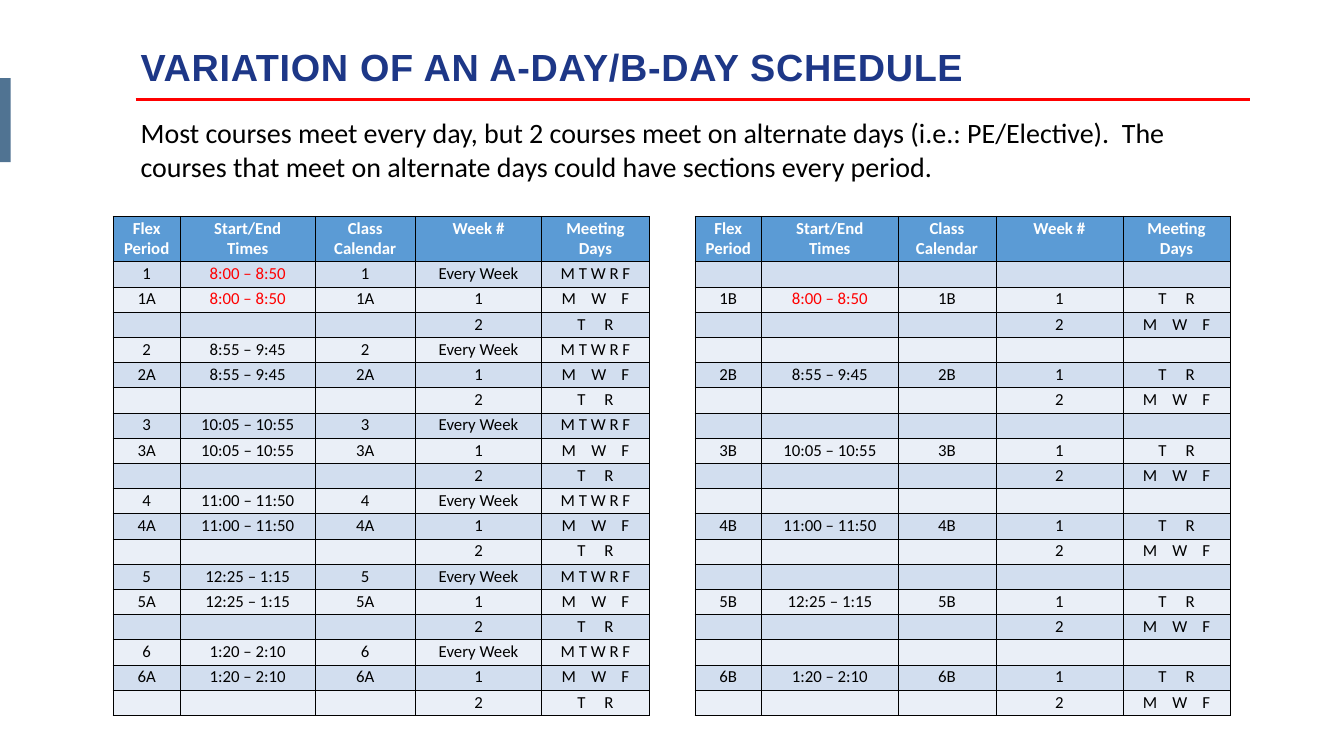
from lxml.etree import SubElement
from pptx import Presentation
from pptx.dml.color import RGBColor
from pptx.enum.shapes import MSO_CONNECTOR as Connector, MSO_SHAPE as Shape
from pptx.enum.text import MSO_ANCHOR as Anchor, MSO_AUTO_SIZE as AutoSize, PP_ALIGN as Align
from pptx.oxml.ns import qn
from pptx.util import Pt

COLORS = {
    "title": "1D3787", "text": "000000", "alert": "FF0000", "accent": "507392",
    "header": "5B9BD5", "header_text": "FFFFFF", "border": "000000",
    "band_dark": "D2DEEF", "band_light": "EAEFF7",
}
TITLE = "VARIATION OF AN A-DAY/B-DAY SCHEDULE"
INTRO = ("Most courses meet every day, but 2 courses meet on alternate days "
         "(i.e.: PE/Elective).  The courses that meet on alternate days could "
         "have sections every period.")
HEADERS = ["Flex\nPeriod", "Start/End\nTimes", "Class\nCalendar", "Week #", "Meeting\nDays"]
TIMES = ["8:00 – 8:50", "8:55 – 9:45", "10:05 – 10:55",
         "11:00 – 11:50", "12:25 – 1:15", "1:20 – 2:10"]
ALERT_TIME = TIMES[0]
EVERY_DAY, MWF, TR = "M T W R F", "M    W    F", "T     R"
SCHEDULES = [
    {"section": "A", "daily": True, "days": (MWF, TR), "left": 161.3,
     "widths": [96.5, 192.2, 143.3, 180.7, 153.4]},
    {"section": "B", "daily": False, "days": (TR, MWF), "left": 992.9,
     "widths": [95, 195.1, 139.7, 181.4, 153.4]},
]
TABLE_TOP, HEADER_HEIGHT, ROW_HEIGHT = 308.9, 65, 36
CELL_FORMAT = {"margin_top": Pt(3), "margin_bottom": Pt(3), "vertical_anchor": Anchor.TOP}


def rgb(name):
    return RGBColor.from_string(COLORS[name])


def set_attributes(target, values):
    for name, value in values.items():
        setattr(target, name, value)


def write(frame, text, color, align=Align.LEFT, **font):
    """Fill a text frame, one paragraph for each line of the text."""
    frame.text = text
    for para in frame.paragraphs:
        set_attributes(para, {"alignment": align, "space_before": Pt(0)})
        for span in para.runs:
            set_attributes(span.font, font)
            span.font.color.rgb = rgb(color)


def place(box, left, top, width, height):
    set_attributes(box, {"left": Pt(left), "top": Pt(top),
                         "width": Pt(width), "height": Pt(height)})
    set_attributes(box.text_frame, {"word_wrap": True, "auto_size": AutoSize.NONE,
                                    "vertical_anchor": Anchor.TOP})


def add_borders(cell):
    properties = cell._tc.get_or_add_tcPr()
    for index, side in enumerate(("lnL", "lnR", "lnT", "lnB")):
        line = properties.makeelement(qn(f"a:{side}"), {"w": str(Pt(1))})
        fill = SubElement(line, qn("a:solidFill"))
        SubElement(fill, qn("a:srgbClr"), val=COLORS["border"])
        properties.insert(index, line)


def schedule_rows(schedule):
    """Three rows a period: the daily class, then the two alternating weeks."""
    rows = []
    for number, time in enumerate(TIMES, 1):
        name = f"{number}{schedule['section']}"
        first, second = schedule["days"]
        daily = [str(number), time, str(number), "Every Week", EVERY_DAY]
        rows += [daily if schedule["daily"] else [""] * len(HEADERS),
                 [name, time, name, "1", first],
                 ["", "", "", "2", second]]
    return rows


def add_schedule(page, schedule):
    rows = [HEADERS] + schedule_rows(schedule)
    height = HEADER_HEIGHT + ROW_HEIGHT * (len(rows) - 1)
    table = page.shapes.add_table(
        len(rows), len(HEADERS), Pt(schedule["left"]), Pt(TABLE_TOP),
        Pt(sum(schedule["widths"])), Pt(height)).table
    for column, width in zip(table.columns, schedule["widths"]):
        column.width = Pt(width)
    for r, values in enumerate(rows):
        is_header = r == 0
        table.rows[r].height = Pt(HEADER_HEIGHT if is_header else ROW_HEIGHT)
        band = "header" if is_header else "band_dark" if r % 2 else "band_light"
        for c, value in enumerate(values):
            cell = table.cell(r, c)
            set_attributes(cell, CELL_FORMAT)
            cell.fill.solid()
            cell.fill.fore_color.rgb = rgb(band)
            add_borders(cell)
            color = ("header_text" if is_header
                     else "alert" if value == ALERT_TIME else "text")
            write(cell.text_frame, value, color, Align.CENTER,
                  name="Calibri", size=Pt(24), bold=is_header)


def main():
    deck = Presentation()
    set_attributes(deck, {"slide_width": Pt(1920), "slide_height": Pt(1080)})
    page = deck.slides.add_slide(deck.slide_layouts[1])

    title, intro = page.placeholders
    place(title, 193.7, 58.3, 1245.6, 72.7)
    write(title.text_frame, TITLE, "title", name="Arial", size=Pt(54), bold=True)
    title.text_frame.paragraphs[0].runs[0]._r.get_or_add_rPr().set("spc", "100")

    place(intro, 193.7, 161.3, 1519.2, 104.4)
    write(intro.text_frame, INTRO, "text", name="Calibri", size=Pt(40))
    para = intro.text_frame.paragraphs[0]
    para.space_after = Pt(12)
    properties = para._p.get_or_add_pPr()
    properties.set("marL", "0")
    properties.set("indent", "0")
    SubElement(properties, qn("a:buNone"))

    rule = page.shapes.add_connector(Connector.STRAIGHT, Pt(193.7), Pt(142.6),
                                     Pt(1786.3), Pt(142.6))
    rule.line.color.rgb = rgb("alert")
    rule.line.width = Pt(4)
    SubElement(rule._element.spPr, qn("a:effectLst"))

    tab = page.shapes.add_shape(Shape.RECTANGLE, Pt(0), Pt(111.6), Pt(15.1), Pt(120.2))
    tab.shadow.inherit = False
    tab.fill.solid()
    tab.fill.fore_color.rgb = rgb("accent")
    tab.line.fill.background()

    for schedule in SCHEDULES:
        add_schedule(page, schedule)
    deck.save("out.pptx")


if __name__ == "__main__":
    main()
